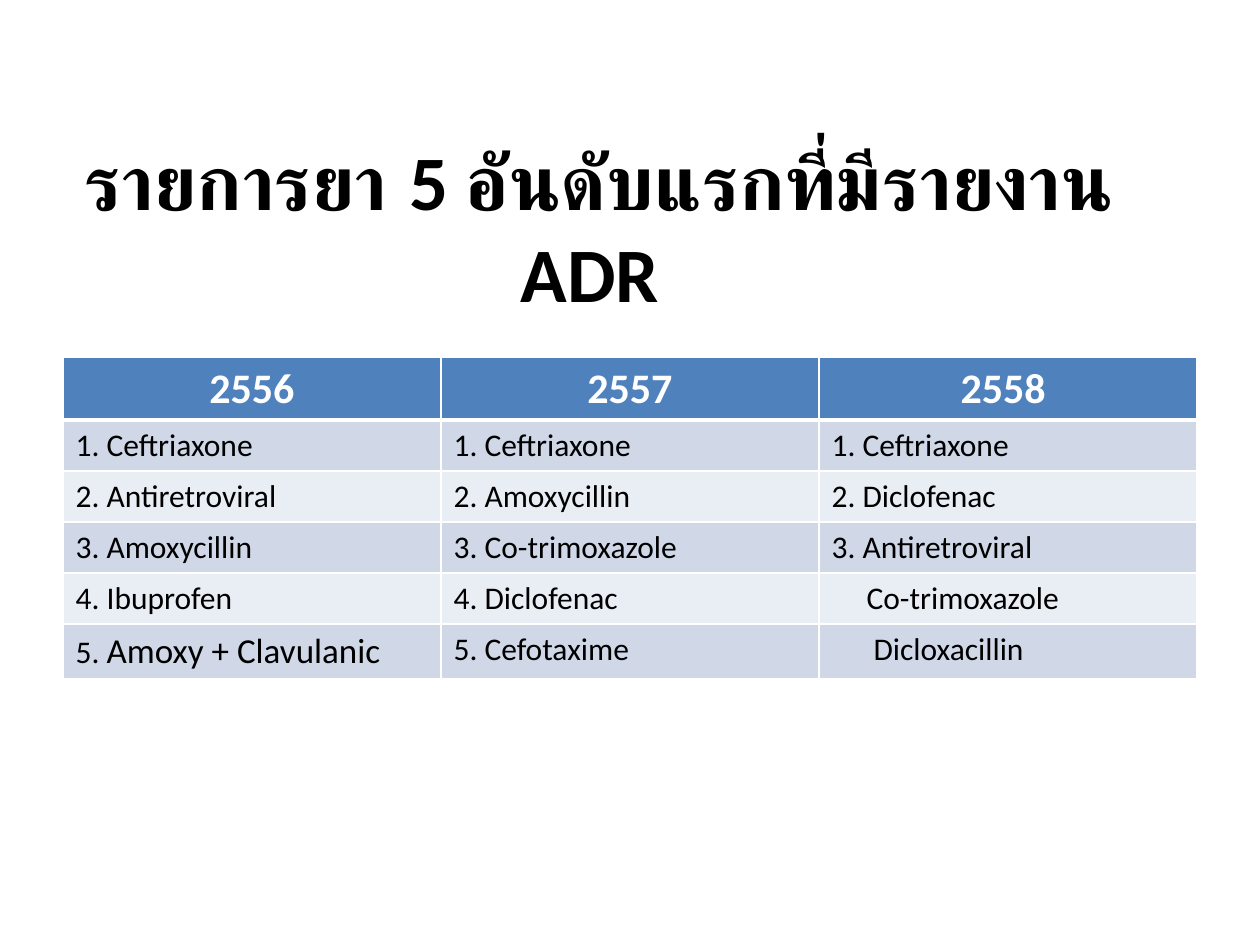
from dataclasses import dataclass

import lxml.etree
import pptx
import pptx.dml.color
import pptx.enum.text
import pptx.oxml.ns
import pptx.util

EMU_PER_PX = 914400 / 126
ALIGN = pptx.enum.text.PP_ALIGN
YEARS = ["2556", "2557", "2558 "]
# Each cell lists its runs as (text, theme size name).
DRUG_ROWS = [
    [[("1. Ceftriaxone", "body")], [("1. Ceftriaxone", "body")], [("1. Ceftriaxone", "body")]],
    [[("2. Antiretroviral", "body")], [("2. Amoxycillin", "body")], [("2. Diclofenac", "body")]],
    [[("3. Amoxycillin", "body")], [("3. Co-trimoxazole", "body")],
     [("3. Antiretroviral", "body")]],
    [[("4. Ibuprofen", "body")], [("4. Diclofenac", "body")], [("Co-trimoxazole", "body")]],
    [[("5. ", "body"), ("Amoxy + Clavulanic", "large")],
     [("5. Cefotaxime", "body")], [("Dicloxacillin", "body")]],
]
# Unnumbered drugs share third place and sit under its name.
TIED_INDENTS = {(4, 2): 35, (5, 2): 42}


@dataclass(frozen=True)
class Theme:
    font: str = "Calibri"
    text: str = "000000"
    white: str = "FFFFFF"
    header: str = "4F81BD"
    bands: tuple = ("D0D8E8", "E9EDF4")
    title: int = 44
    heading: int = 24
    large: int = 20
    body: int = 18


THEME = Theme()


def px(n):
    return pptx.util.Emu(round(n * EMU_PER_PX))


def rgb(value):
    return pptx.dml.color.RGBColor.from_string(value)


def add_run(p, text, size, color, bold=False):
    r = p.add_run()
    r.text = text
    r.font.name = THEME.font
    r.font.size = pptx.util.Pt(size)
    r.font.bold = bold
    r.font.color.rgb = rgb(color)


def add_title(s, text):
    sp = s.shapes.add_textbox(px(32), px(147), px(1134), px(158))
    tf = sp.text_frame
    tf.word_wrap = True
    tf.vertical_anchor = pptx.enum.text.MSO_ANCHOR.MIDDLE
    p = tf.paragraphs[0]
    p.alignment = ALIGN.CENTER
    add_run(p, text, THEME.title, THEME.text, bold=True)


def set_borders(cell, bottom):
    """Draw white cell edges; the bottom width is in points."""
    tc_pr = cell._tc.get_or_add_tcPr()
    widths = {"a:lnL": 1, "a:lnR": 1, "a:lnT": 1, "a:lnB": bottom}
    for i, (tag, width) in enumerate(widths.items()):
        ln = lxml.etree.Element(pptx.oxml.ns.qn(tag), w=str(pptx.util.Pt(width)))
        fill = lxml.etree.SubElement(ln, pptx.oxml.ns.qn("a:solidFill"))
        lxml.etree.SubElement(fill, pptx.oxml.ns.qn("a:srgbClr"), val=THEME.white)
        tc_pr.insert(i, ln)


def style_cell(cell, fill, bottom=1):
    cell.fill.solid()
    cell.fill.fore_color.rgb = rgb(fill)
    set_borders(cell, bottom)


def add_drug_table(s):
    row_count = len(DRUG_ROWS) + 1
    frame = s.shapes.add_table(row_count, len(YEARS), px(63), px(357),
                               px(1134), px(51 * row_count))
    table = frame.table
    for col, year in enumerate(YEARS):
        cell = table.cell(0, col)
        style_cell(cell, THEME.header, bottom=3)
        p = cell.text_frame.paragraphs[0]
        p.alignment = ALIGN.CENTER
        add_run(p, year, THEME.heading, THEME.white, bold=True)

    for row, drugs in enumerate(DRUG_ROWS, start=1):
        for col, runs in enumerate(drugs):
            cell = table.cell(row, col)
            style_cell(cell, THEME.bands[(row - 1) % 2])
            p = cell.text_frame.paragraphs[0]
            if (row, col) in TIED_INDENTS:
                p_pr = p._p.get_or_add_pPr()
                p_pr.set("marL", str(px(TIED_INDENTS[row, col])))
            for text, size in runs:
                add_run(p, text, getattr(THEME, size), THEME.text)


def main():
    prs = pptx.Presentation()
    prs.slide_width, prs.slide_height = px(1260), px(945)
    s = prs.slides.add_slide(prs.slide_layouts[6])
    add_title(s, "รายการยา 5 อันดับแรกที่มีรายงาน ADR ")
    add_drug_table(s)
    prs.save("out.pptx")


if __name__ == "__main__":
    main()
